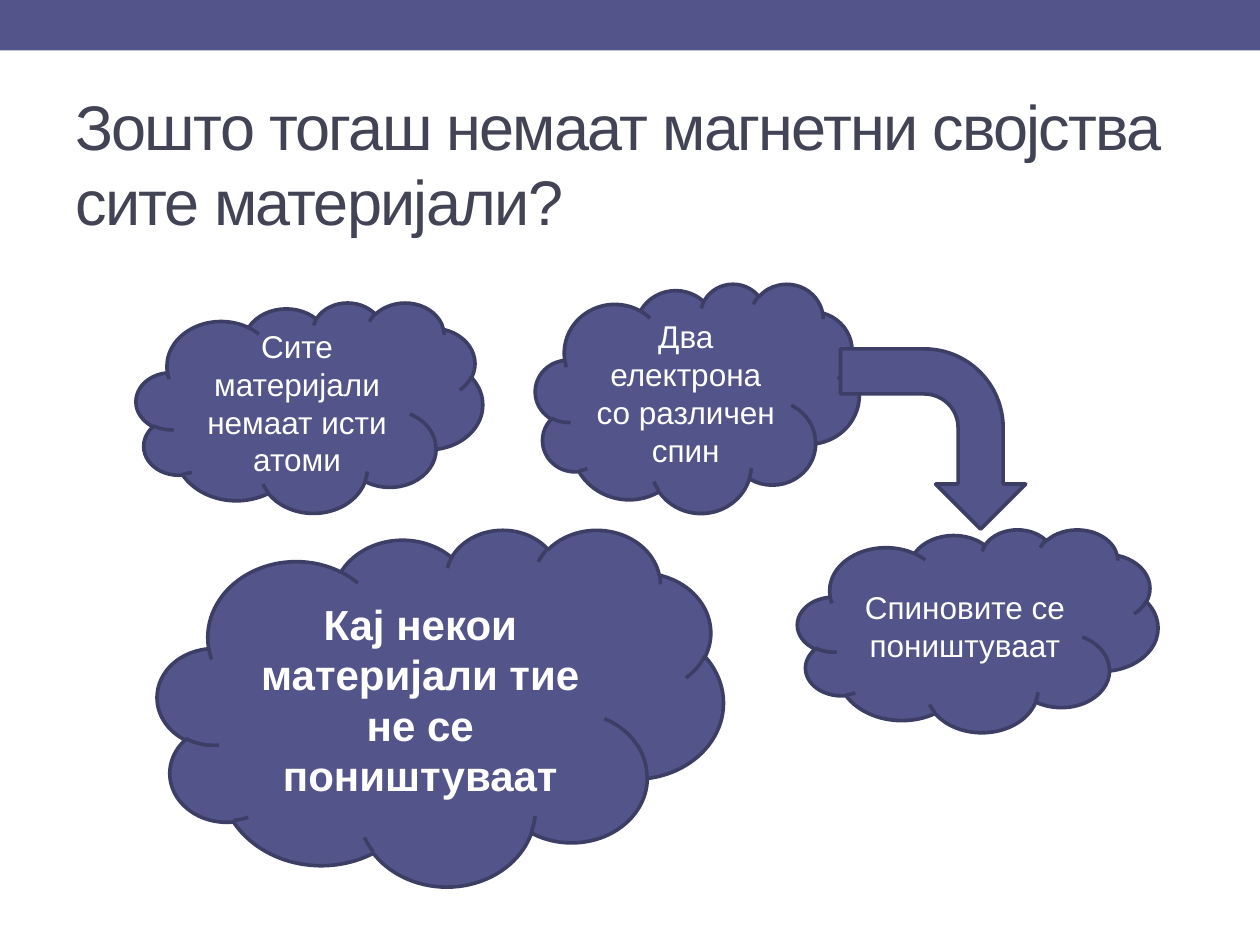
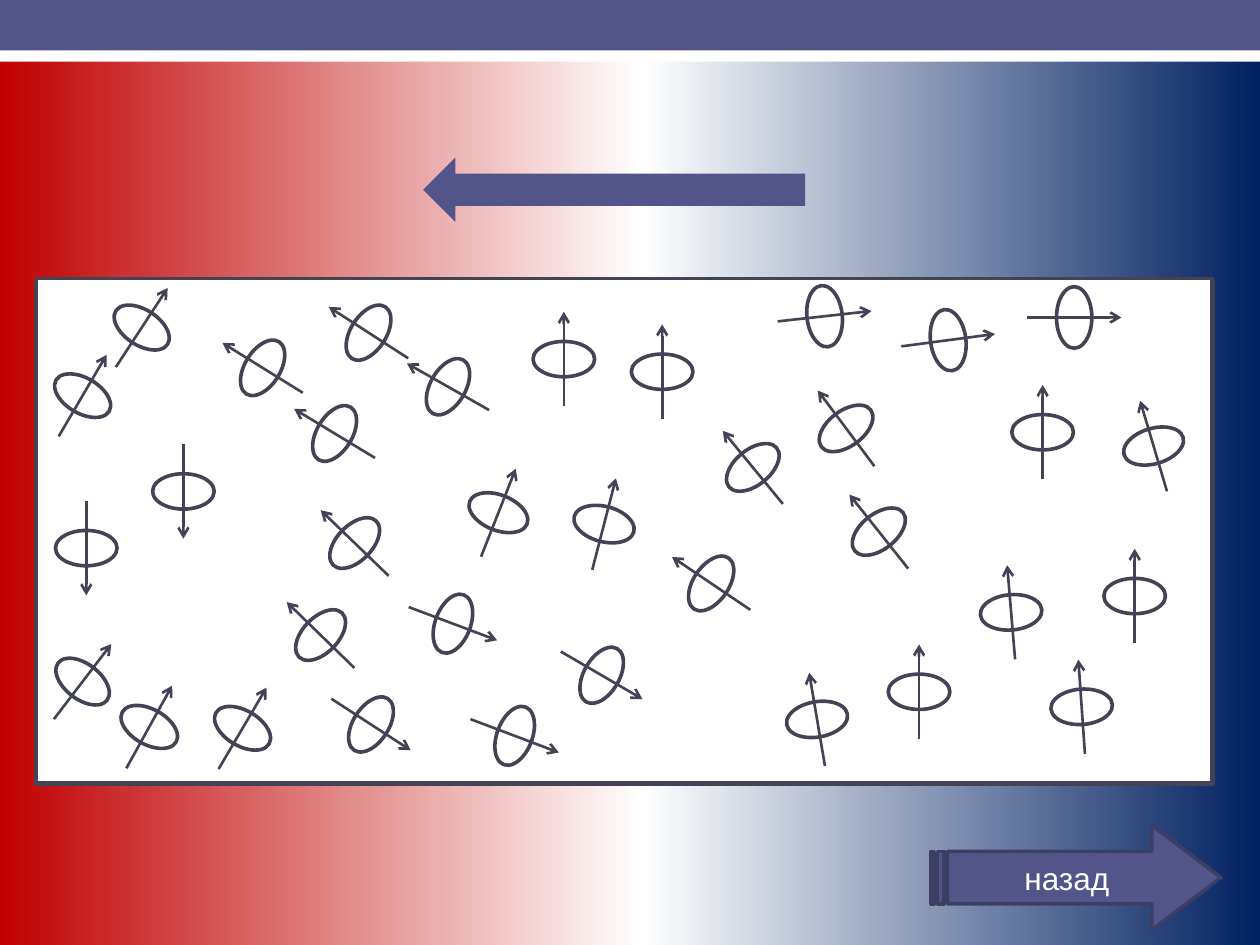
from math import cos, radians, sin
from typing import NamedTuple, Optional

from lxml import etree
from pptx import Presentation
from pptx.dml.color import RGBColor
from pptx.enum.shapes import MSO_CONNECTOR, MSO_SHAPE
from pptx.enum.text import MSO_ANCHOR, PP_ALIGN
from pptx.oxml.ns import qn
from pptx.util import Pt

RECTANGLE, ELLIPSE, CLOUD = MSO_SHAPE.RECTANGLE, MSO_SHAPE.OVAL, MSO_SHAPE.CLOUD
BENT_ARROW, UP_ARROW = MSO_SHAPE.BENT_ARROW, MSO_SHAPE.UP_ARROW
STRIPED_ARROW = MSO_SHAPE.STRIPED_RIGHT_ARROW
STRAIGHT = MSO_CONNECTOR.STRAIGHT
MIDDLE, LEFT, CENTER = MSO_ANCHOR.MIDDLE, PP_ALIGN.LEFT, PP_ALIGN.CENTER

FONT = "Arial"
VIOLET, VIOLET_EDGE, INK, WHITE = "53548A", "3D3E66", "424456", "FFFFFF"
RED, NAVY = "C00000", "002060"
OUTLINE = 2.08
SLIDE_WIDTH, SLIDE_HEIGHT = 720, 540
ORBIT_WIDTH, ORBIT_HEIGHT, SPIN_LENGTH = 35.2, 20.2, 54


class Box(NamedTuple):
    """Left, top, width and height in points."""

    left: float
    top: float
    width: float
    height: float


class Statement(NamedTuple):
    """A cloud with its wording."""

    box: Box
    wording: str
    size: float = 18
    bold: bool = False


class Dipole(NamedTuple):
    """Centre of an electron orbit and the clockwise angle of its spin."""

    x: float
    y: float
    angle: float = 0


STATEMENTS = [
    Statement(Box(77.8, 172.8, 198, 120.2), "Сите материјали немаат исти атоми"),
    Statement(Box(306, 162, 185, 131), "Два електрона со различен спин"),
    Statement(Box(455.8, 302.4, 205.9, 115.9), "Спиновите се поништуваат"),
    Statement(Box(90, 302.4, 323.3, 203.8),
              "Кај некои материјали тие не се поништуваат", 24, True),
]

DIPOLES = [
    Dipole(47.2, 226.1, 30.4), Dipole(81, 187.2, 33.2), Dipole(150.1, 210.2, 301.8),
    Dipole(191.2, 247.7, 301.2), Dipole(210.6, 190.1, 302.9), Dipole(256, 221, 299.6),
    Dipole(322.2, 205.2), Dipole(378.4, 212.4), Dipole(471.2, 180.7, 83.7),
    Dipole(541.8, 194.4, 82.5), Dipole(613.8, 181.4, 90), Dipole(595.8, 247),
    Dipole(659.2, 254.9, 343.5), Dipole(483.5, 244.8, 323.2), Dipole(502.2, 303.8, 321.6),
    Dipole(49.3, 313.2, 180), Dipole(104.8, 280.8, 180), Dipole(202.7, 310.3, 314),
    Dipole(183.2, 362.9, 314.2), Dipole(138.6, 416.2, 30.5), Dipole(47.2, 389.5, 37.4),
    Dipole(85.3, 415.4, 29), Dipole(212, 414, 123), Dipole(258.8, 356.4, 110.6),
    Dipole(343.8, 385.9, 120.2), Dipole(294.1, 420.5, 110.7), Dipole(284.8, 293, 21.5),
    Dipole(345.2, 299.5, 14.5), Dipole(430.2, 267.1, 320.6), Dipole(406.4, 333.4, 304),
    Dipole(466.9, 411.1, 350.4), Dipole(525.2, 395.3), Dipole(577.8, 349.9, 355.2),
    Dipole(648.4, 340.6), Dipole(618.1, 403.9, 356),
]


def color(value: str) -> RGBColor:
    """Turn a hex string into a colour."""
    return RGBColor.from_string(value)


def set_gradient(fill, owner, stops: list[tuple[int, str]]) -> None:
    """Fill from left to right through the given percent stops."""
    fill.gradient()
    fill.gradient_angle = 0
    stop_list = next(owner.iter(qn("a:gsLst")))
    for old_stop in list(stop_list):
        stop_list.remove(old_stop)
    for percent, value in stops:
        stop = etree.SubElement(stop_list, qn("a:gs"), pos=str(percent * 1000))
        etree.SubElement(stop, qn("a:srgbClr"), val=value)


def add_figure(shapes, preset, box: Box, fill: str, edge: Optional[str] = None,
               width: float = OUTLINE, angle: float = 0):
    """Draw a flat preset shape."""
    figure = shapes.add_shape(preset, *map(Pt, box))
    figure.shadow.inherit = False
    figure.rotation = angle
    figure.fill.solid()
    figure.fill.fore_color.rgb = color(fill)
    if edge:
        figure.line.color.rgb = color(edge)
        figure.line.width = Pt(width)
    else:
        figure.line.fill.background()
    return figure


def write(figure, wording: str, size: float, ink: str = WHITE, bold: bool = False,
          align=CENTER) -> None:
    """Write one wrapped paragraph."""
    frame = figure.text_frame
    frame.word_wrap = True
    frame.vertical_anchor = MIDDLE
    paragraph = frame.paragraphs[0]
    paragraph.alignment = align
    run = paragraph.add_run()
    run.text = wording
    run.font.name = FONT
    run.font.size = Pt(size)
    run.font.bold = bold
    run.font.color.rgb = color(ink)


def add_title(slide, wording: str) -> None:
    """Place the slide title with tightened letters."""
    title = slide.shapes.add_textbox(*map(Pt, Box(36, 41.8, 648, 102.2)))
    write(title, wording, 36, INK, align=LEFT)
    next(title.element.iter(qn("a:rPr"))).set("spc", "-100")


def add_band(slide) -> None:
    """Draw the top band with its white lower strip."""
    add_figure(slide.shapes, RECTANGLE, Box(0, 17.3, SLIDE_WIDTH, 18), WHITE)
    add_figure(slide.shapes, RECTANGLE, Box(0, 0, SLIDE_WIDTH, 28.8), VIOLET)


def add_dipole(slide, dipole: Dipole) -> None:
    """Draw an orbit crossed by its spin arrow."""
    shapes = slide.shapes.add_group_shape().shapes
    orbit = Box(dipole.x - ORBIT_WIDTH / 2, dipole.y - ORBIT_HEIGHT / 2,
                ORBIT_WIDTH, ORBIT_HEIGHT)
    add_figure(shapes, ELLIPSE, orbit, WHITE, INK, angle=dipole.angle)
    dx = SPIN_LENGTH / 2 * sin(radians(dipole.angle))
    dy = -SPIN_LENGTH / 2 * cos(radians(dipole.angle))
    spin = shapes.add_connector(STRAIGHT, Pt(dipole.x - dx), Pt(dipole.y - dy),
                                Pt(dipole.x + dx), Pt(dipole.y + dy))
    spin.line.color.rgb = color(INK)
    spin.line.width = Pt(1.5)
    outline = next(spin.element.iter(qn("a:ln")))
    etree.SubElement(outline, qn("a:tailEnd"), type="arrow")
    etree.SubElement(outline.getparent(), qn("a:effectLst"))


def build_question(slide) -> None:
    """Explain why some materials are not magnetic."""
    add_band(slide)
    add_title(slide, "Зошто тогаш немаат магнетни својства сите материјали?")
    for statement in STATEMENTS:
        cloud = add_figure(slide.shapes, CLOUD, statement.box, VIOLET, VIOLET_EDGE)
        write(cloud, statement.wording, statement.size, bold=statement.bold)
    add_figure(slide.shapes, BENT_ARROW, Box(481.7, 198, 103, 105.8),
               VIOLET, VIOLET_EDGE, angle=90)


def build_domains(slide) -> None:
    """Show magnetic domains inside an outer field."""
    set_gradient(slide.background.fill, slide.element,
                 [(0, RED), (51, WHITE), (100, NAVY)])
    add_band(slide)
    magnet = add_figure(slide.shapes, RECTANGLE, Box(20.9, 160.6, 671.8, 287.3),
                        WHITE, INK, 3)
    set_gradient(magnet.fill, magnet.element, [(23, NAVY), (49, WHITE), (80, RED)])
    add_figure(slide.shapes, RECTANGLE, Box(20.9, 159.1, 671.8, 288), WHITE, INK)
    for dipole in DIPOLES:
        add_dipole(slide, dipole)
    add_figure(slide.shapes, UP_ARROW, Box(332.6, -0.7, 36.7, 218.2), VIOLET, angle=270)
    back = add_figure(slide.shapes, STRIPED_ARROW, Box(532.1, 471.6, 165.6, 59.8),
                      VIOLET, VIOLET_EDGE)
    back.adjustments[0], back.adjustments[1] = 0.5, 0.66
    write(back, "назад", 18)


def main() -> None:
    """Build and save the presentation."""
    deck = Presentation()
    deck.slide_width, deck.slide_height = Pt(SLIDE_WIDTH), Pt(SLIDE_HEIGHT)
    blank = deck.slide_layouts[6]
    for build in (build_question, build_domains):
        build(deck.slides.add_slide(blank))
    deck.save("out.pptx")


if __name__ == "__main__":
    main()
